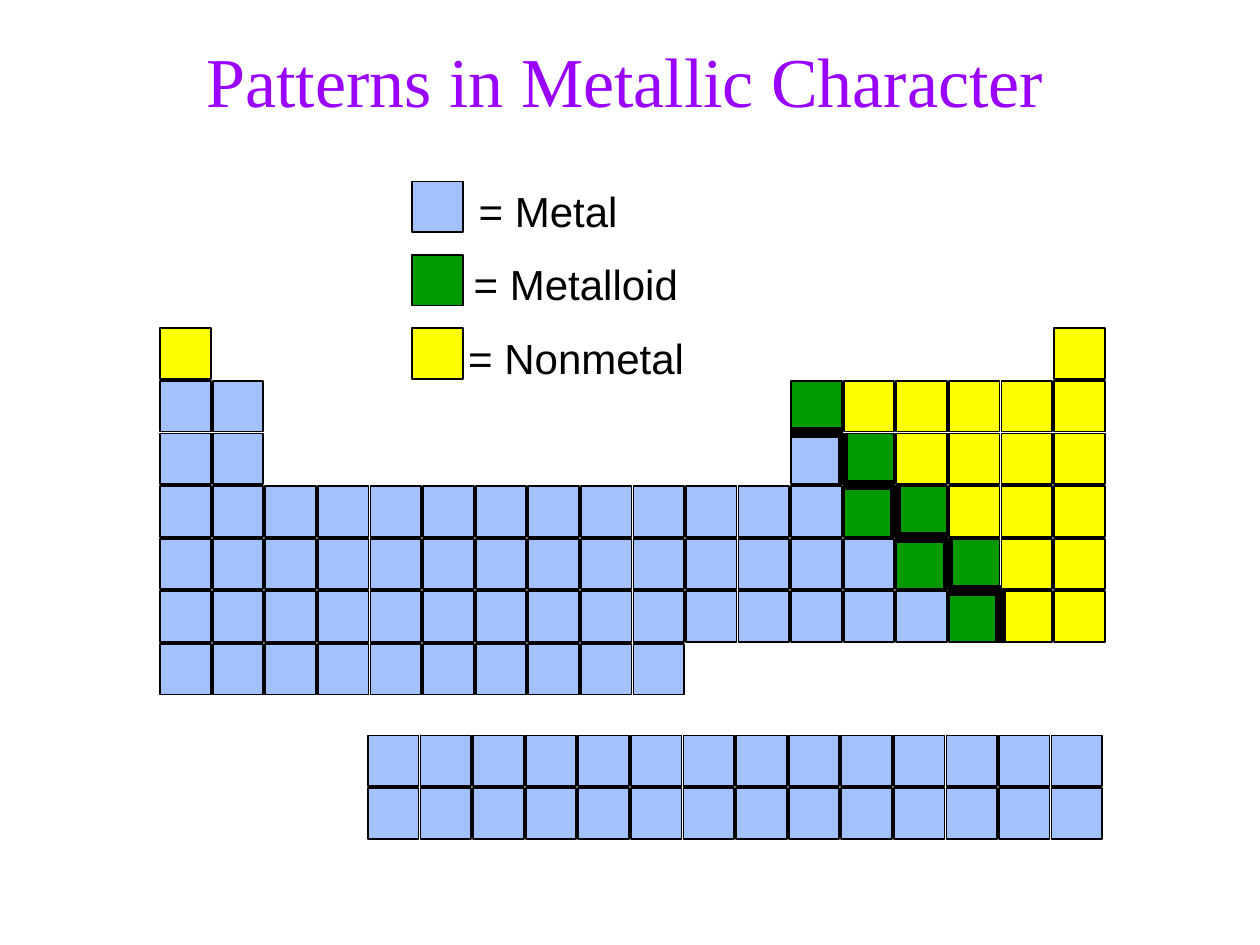
from dataclasses import dataclass

import pptx
import pptx.dml.color
import pptx.enum.shapes
import pptx.enum.text
import pptx.oxml.ns
import pptx.util
from lxml import etree
from pptx.util import Cm

CELL = 1.02
PITCH = 1.06
BLACK = "000000"
FILLS = {"M": "A2C1FE", "S": "009900", "N": "FFFF00"}  # metal, metalloid, nonmetal


@dataclass(frozen=True)
class Grid:
    left: float
    top: float
    rows: tuple[str, ...]


@dataclass(frozen=True)
class LegendEntry:
    kind: str
    label: str
    text_left: float


MAIN_TABLE = Grid(3.23, 6.62, (
    "N" + "." * 16 + "N",
    "MM" + "." * 10 + "SNNNNN",
    "MM" + "." * 10 + "MSNNNN",
    "M" * 13 + "SSNNN",
    "M" * 14 + "SSNN",
    "M" * 15 + "SNN",
    "M" * 10,
))
INNER_METALS = Grid(7.42, 14.83, ("M" * 14,) * 2)
LEGEND = (
    LegendEntry("M", "= Metal", 9.4),
    LegendEntry("S", "= Metalloid", 9.3),
    LegendEntry("N", "= Nonmetal", 9.19),
)


def rgb(color: str) -> pptx.dml.color.RGBColor:
    return pptx.dml.color.RGBColor.from_string(color)


def add_cell(shapes, left: float, top: float, kind: str) -> None:
    sp = shapes.add_shape(pptx.enum.shapes.MSO_SHAPE.RECTANGLE,
                          Cm(left), Cm(top), Cm(CELL), Cm(CELL))
    sp.shadow.inherit = False
    sp.fill.solid()
    sp.fill.fore_color.rgb = rgb(FILLS[kind])
    sp.line.color.rgb = rgb(BLACK)
    sp.line.width = pptx.util.Pt(1)


def add_grid(shapes, grid: Grid) -> None:
    """Draw one cell per letter; a dot leaves its place empty."""
    for i, row in enumerate(grid.rows):
        for j, kind in enumerate(row):
            if kind != ".":
                add_cell(shapes, grid.left + j * PITCH, grid.top + i * PITCH, kind)


def add_text(s, left: float, top: float, width: float, height: float, text: str,
             size: int, font: str, color: str):
    sp = s.shapes.add_textbox(Cm(left), Cm(top), Cm(width), Cm(height))
    tf = sp.text_frame
    tf.word_wrap = True
    r = tf.paragraphs[0].add_run()
    r.text = text
    r.font.size = pptx.util.Pt(size)
    r.font.name = font
    r.font.color.rgb = rgb(color)
    return sp


def add_line(s, x1: float, y1: float, x2: float, y2: float) -> None:
    sp = s.shapes.add_connector(pptx.enum.shapes.MSO_CONNECTOR.STRAIGHT,
                                Cm(x1), Cm(y1), Cm(x2), Cm(y2))
    sp.line.color.rgb = rgb(BLACK)
    sp.line.width = pptx.util.Pt(6)
    etree.SubElement(sp._element.spPr, pptx.oxml.ns.qn("a:effectLst"))


def add_staircase(s, grid: Grid, col: int, row: int, steps: int) -> None:
    """Draw the dividing line from a cell corner, alternately right and down."""
    inset = (PITCH - CELL) / 2
    for i in range(steps):
        x = grid.left + (col + i) * PITCH - inset
        y = grid.top + (row + i) * PITCH - inset
        add_line(s, x, y, x + PITCH, y)
        add_line(s, x + PITCH, y, x + PITCH, y + PITCH)


def add_legend(s) -> None:
    for i, entry in enumerate(LEGEND):
        top = 3.66 + i * 1.48
        add_cell(s.shapes, 8.31, top, entry.kind)
        add_text(s, entry.text_left, top - 0.05, 5.6, 1.27, entry.label, 24, "Arial", BLACK)


def add_title(s) -> None:
    sp = add_text(s, 3.81, 0.43, 17.58, 2.34, "Patterns in Metallic Character",
                  40, "Times New Roman", "9900FF")
    sp.fill.solid()
    sp.fill.fore_color.rgb = rgb("FFFFFF")
    sp.text_frame.vertical_anchor = pptx.enum.text.MSO_ANCHOR.MIDDLE
    sp.text_frame.paragraphs[0].alignment = pptx.enum.text.PP_ALIGN.CENTER


def main() -> None:
    prs = pptx.Presentation()
    prs.slide_width, prs.slide_height = Cm(25.4), Cm(19.05)
    s = prs.slides.add_slide(prs.slide_layouts[6])
    add_title(s)
    add_grid(s.shapes, MAIN_TABLE)
    add_staircase(s, MAIN_TABLE, col=12, row=2, steps=4)
    add_legend(s)
    add_grid(s.shapes.add_group_shape().shapes, INNER_METALS)
    prs.save("out.pptx")


if __name__ == "__main__":
    main()
